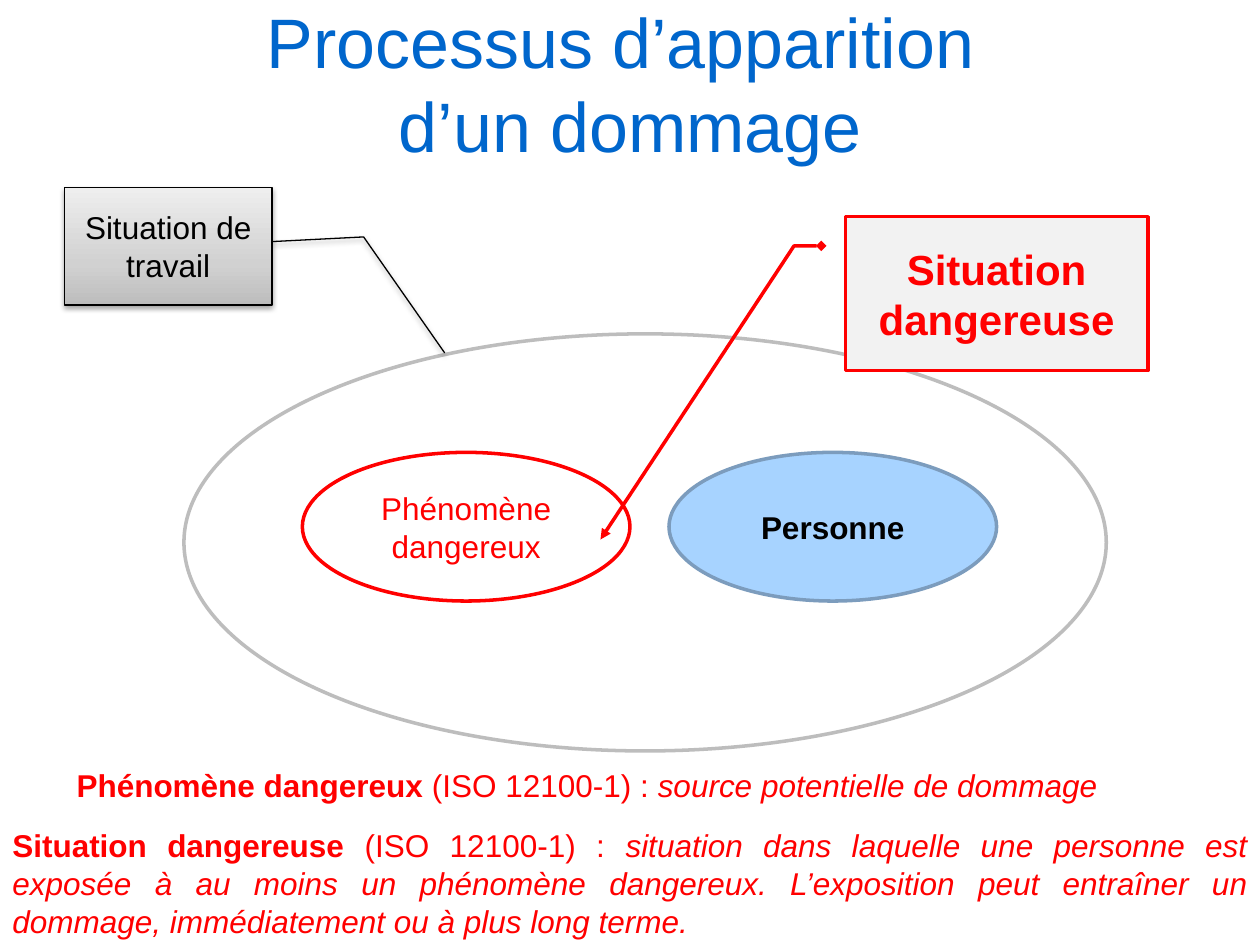
from copy import deepcopy

from lxml.etree import SubElement
from pptx import Presentation
from pptx.dml.color import RGBColor
from pptx.enum.shapes import MSO_SHAPE
from pptx.enum.text import MSO_ANCHOR, MSO_AUTO_SIZE, PP_ALIGN
from pptx.oxml.ns import qn
from pptx.util import Inches, Pt

COLORS = {
    "title": "0066CC", "danger": "FF0000", "text": "000000",
    "person": "A7D3FF", "person_line": "7C9CBD", "work": "BDBDBD",
    "panel": "F2F2F2", "work_mid": "D1D1D1", "work_light": "EEEEEE",
}
TITLE = "Processus d’apparition \vd’un dommage"
ELLIPSES = [
    ("Personne", (5.31, 3.59, 2.6, 1.18), "person", "person_line", "text", True),
    ("Phénomène dangereux", (2.4, 3.59, 2.6, 1.18), None, "danger", "danger", False),
    ("", (1.46, 2.65, 7.32, 3.31), None, "work", "text", False),
]
DANGER_CALLOUT = ("Situation dangereuse", (6.71, 1.72, 2.4, 1.22),
                  (0.19, -0.08, 0.19, -0.17, 2.1, -0.81))
WORK_CALLOUT = ("Situation de travail", (0.51, 1.49, 1.65, 0.93),
                (0.46, 1, 0.42, 1.44, 1.41, 1.83))
WORK_GRADIENT = [(0, "work"), (0.35, "work_mid"), (1, "work_light")]
NORM = "(ISO 12100-1) : "
DEFINITIONS = [
    ("Phénomène dangereux ", "source potentielle de dommage",
     (0.51, 6.03, 8.66, 0.4), PP_ALIGN.LEFT),
    ("Situation dangereuse ",
     "situation dans laquelle une personne est exposée à au moins un phénomène "
     "dangereux. L’exposition peut entraîner un dommage, immédiatement ou à plus "
     "long terme.",
     (0, 6.51, 10, 1.01), PP_ALIGN.JUSTIFY),
]


def rgb(name):
    return RGBColor.from_string(COLORS[name])


def style(font, color, size=18, bold=False, italic=False):
    font.name, font.size, font.bold, font.italic = "Arial", Pt(size), bold, italic
    font.color.rgb = rgb(color)


def write_centered(shape, text, color, size=18, bold=False):
    frame = shape.text_frame
    frame.word_wrap = True
    frame.vertical_anchor = MSO_ANCHOR.MIDDLE
    paragraph = frame.paragraphs[0]
    paragraph.text = text
    paragraph.alignment = PP_ALIGN.CENTER
    style(paragraph.font, color, size, bold)
    for run in paragraph.runs:
        style(run.font, color, size, bold)


def add_figure(slide, preset, box, fill, line, width=2):
    figure = slide.shapes.add_shape(preset, *map(Inches, box))
    figure.shadow.inherit = False
    if fill:
        figure.fill.solid()
        figure.fill.fore_color.rgb = rgb(fill)
    else:
        figure.fill.background()
    figure.line.color.rgb = rgb(line)
    figure.line.width = Pt(width)
    return figure


def add_callout(slide, box, adjustments, fill, line, width):
    callout = add_figure(slide, MSO_SHAPE.LINE_CALLOUT_2, box, fill, line, width)
    for index, value in enumerate(adjustments):
        callout.adjustments[index] = value
    return callout


def add_arrowheads(callout):
    outline = callout.element.spPr.find(qn("a:ln"))
    SubElement(outline, qn("a:headEnd"), type="diamond")
    SubElement(outline, qn("a:tailEnd"), type="triangle")


def apply_gradient(callout):
    fill = callout.fill
    fill.gradient()
    fill.gradient_angle = 90
    stop_list = callout.element.spPr.find(qn("a:gradFill")).find(qn("a:gsLst"))
    stop_list.append(deepcopy(stop_list[0]))
    for stop, (position, color) in zip(fill.gradient_stops, WORK_GRADIENT):
        stop.position = position
        stop.color.rgb = rgb(color)


def apply_shadow(callout):
    effects = callout.element.spPr.find(qn("a:effectLst"))
    shadow = SubElement(effects, qn("a:outerShdw"), blurRad="40000", dist="20000",
                        dir="5400000", rotWithShape="0")
    tint = SubElement(shadow, qn("a:srgbClr"), val=COLORS["text"])
    SubElement(tint, qn("a:alpha"), val="38000")


def add_definition(slide, term, meaning, box, alignment):
    frame = slide.shapes.add_textbox(*map(Inches, box)).text_frame
    frame.word_wrap = True
    frame.auto_size = MSO_AUTO_SIZE.SHAPE_TO_FIT_TEXT
    paragraph = frame.paragraphs[0]
    paragraph.alignment = alignment
    for text, bold, italic in ((term, True, False), (NORM, False, False),
                               (meaning, False, True)):
        run = paragraph.add_run()
        run.text = text
        style(run.font, "danger", bold=bold, italic=italic)


def main():
    """Build the slide on how harm arises from a dangerous situation."""
    deck = Presentation()
    deck.slide_width, deck.slide_height = Inches(10), Inches(7.5)
    slide = deck.slides.add_slide(deck.slide_layouts[5])

    title = slide.shapes.title
    title.left, title.top, title.width, title.height = map(Inches, (0.5, 0.08, 9, 1.15))
    write_centered(title, TITLE, "title", 40)

    for text, box, fill, line, color, bold in ELLIPSES:
        ellipse = add_figure(slide, MSO_SHAPE.OVAL, box, fill, line)
        if text:
            write_centered(ellipse, text, color, bold=bold)

    text, box, adjustments = DANGER_CALLOUT
    danger = add_callout(slide, box, adjustments, "panel", "danger", 2)
    add_arrowheads(danger)
    write_centered(danger, text, "danger", 24, True)

    text, box, adjustments = WORK_CALLOUT
    work = add_callout(slide, box, adjustments, "work", "text", 0.75)
    apply_gradient(work)
    apply_shadow(work)
    write_centered(work, text, "text")

    for definition in DEFINITIONS:
        add_definition(slide, *definition)
    deck.save("out.pptx")


if __name__ == "__main__":
    main()
